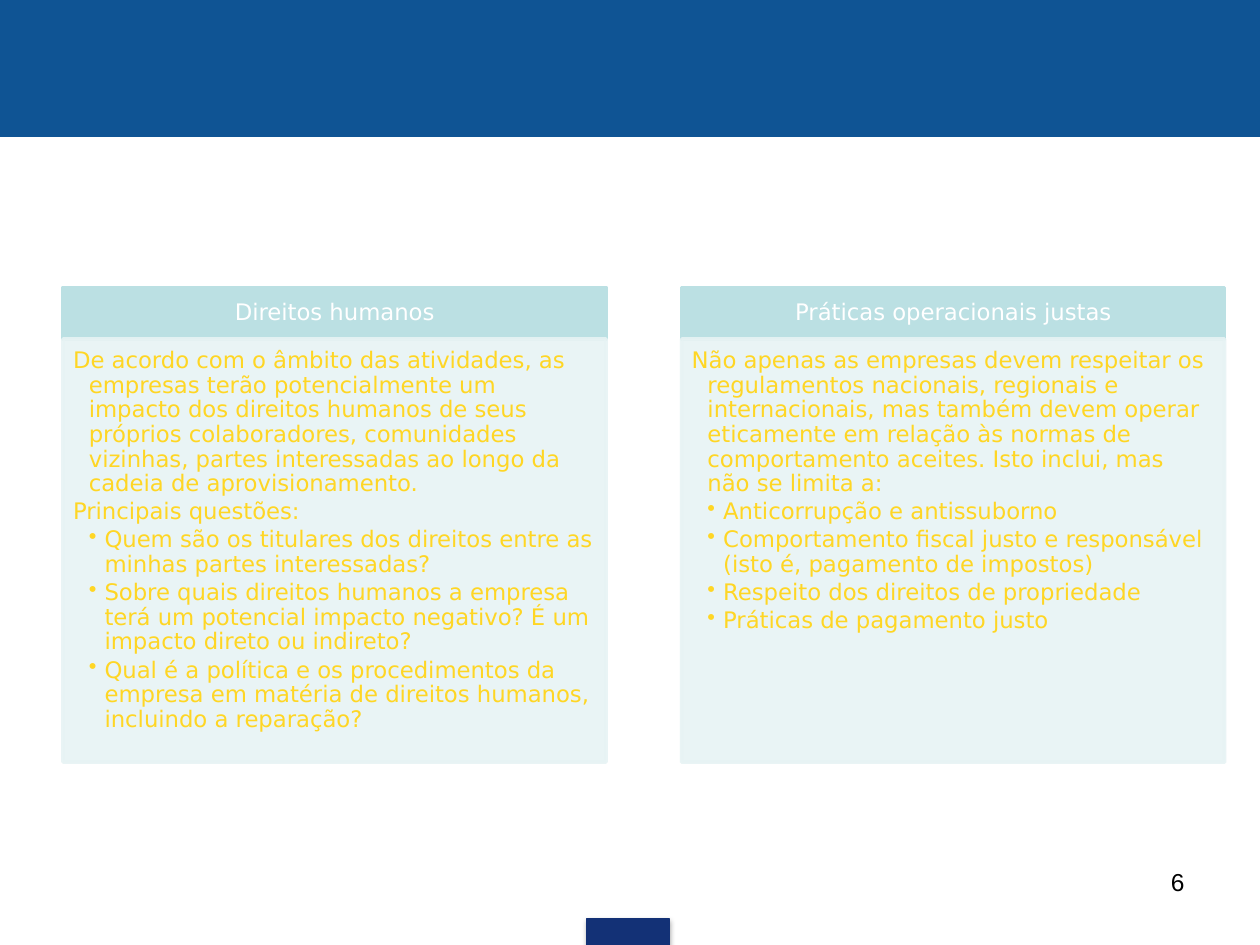
from lxml import etree
from pptx import Presentation
from pptx import util as u
from pptx.dml.color import RGBColor
from pptx.enum import shapes, text
from pptx.oxml import ns

BODY_FONT = "DejaVu Sans"
BODY_SIZE = 13
YELLOW = "FFD624"
INDENT = 0.125


def colour(value):
    return RGBColor.from_string(value)


def add_element(parent, tag, **attributes):
    return etree.SubElement(parent, ns.qn(tag), attributes)


class SlideWriter:
    def __init__(self, page):
        self.page = page

    def rectangle(self, left, top, width, height, fill, line_width=0.75, alpha=None):
        box = self.page.shapes.add_shape(
            shapes.MSO_SHAPE.RECTANGLE,
            *(u.Inches(value) for value in (left, top, width, height)))
        box.shadow.inherit = False
        box.fill.solid()
        box.fill.fore_color.rgb = colour(fill)
        box.line.color.rgb = colour(fill)
        box.line.width = u.Pt(line_width)
        if alpha:
            for tint in box._element.spPr.iter(ns.qn("a:srgbClr")):
                add_element(tint, "a:alpha", val=str(alpha * 1000))
        return box

    def shadow(self, box):
        effects = box._element.spPr.find(ns.qn("a:effectLst"))
        outer = add_element(effects, "a:outerShdw", blurRad=str(u.Pt(3.1)),
                            dist=str(u.Pt(1.8)), dir="5400000", rotWithShape="0")
        tint = add_element(outer, "a:srgbClr", val="000000")
        add_element(tint, "a:alpha", val="35000")

    def frame(self, box, anchor, insets=(0.1, 0.05, 0.1, 0.05)):
        frame = box.text_frame
        frame.word_wrap = True
        frame.vertical_anchor = anchor
        (frame.margin_left, frame.margin_top,
         frame.margin_right, frame.margin_bottom) = map(u.Inches, insets)
        return frame

    def span(self, para, words, ink, size=BODY_SIZE, font=BODY_FONT):
        span = para.add_run()
        span.text = words
        span.font.size = u.Pt(size)
        span.font.name = font
        span.font.color.rgb = colour(ink)

    def heading(self, box, words):
        frame = self.frame(box, text.MSO_ANCHOR.MIDDLE, (0.1, 0.06, 0.1, 0.06))
        para = frame.paragraphs[0]
        para.alignment = text.PP_ALIGN.CENTER
        para.line_spacing = 0.9
        self.span(para, words, "FFFFFF")

    def body(self, box, items):
        frame = self.frame(box, text.MSO_ANCHOR.TOP, (0.08, 0.08, 0.1, 0.11))
        for index, (level, words) in enumerate(items):
            para = frame.add_paragraph() if index else frame.paragraphs[0]
            para.level = level
            para.alignment = text.PP_ALIGN.LEFT
            properties = para._p.get_or_add_pPr()
            properties.set("marL", str(u.Inches(INDENT * level)))
            properties.set("indent", str(-u.Inches(INDENT)))
            if level == 2:
                add_element(properties, "a:buChar", char="•")
            else:
                add_element(properties, "a:buNone")
            para.line_spacing = 0.9
            para.space_after = u.Pt(2)
            self.span(para, words, YELLOW)

    def page_number(self, number):
        box = self.page.shapes.add_textbox(
            u.Inches(7.17), u.Inches(6.83), u.Inches(2.33), u.Inches(0.52))
        para = self.frame(box, text.MSO_ANCHOR.TOP).paragraphs[0]
        para.alignment = text.PP_ALIGN.RIGHT
        self.span(para, number, "000000", 14, "Arial")


PANELS = [
    ("Direitos humanos", [
        (1, "De acordo com o âmbito das atividades, as empresas terão potencialmente "
            "um impacto dos direitos humanos de seus próprios colaboradores, comunidades "
            "vizinhas, partes interessadas ao longo da cadeia de aprovisionamento."),
        (1, "Principais questões:"),
        (2, "Quem são os titulares dos direitos entre as minhas partes interessadas?"),
        (2, "Sobre quais direitos humanos a empresa terá um potencial impacto negativo? "
            "É um impacto direto ou indireto?"),
        (2, "Qual é a política e os procedimentos da empresa em matéria de direitos "
            "humanos, incluindo a reparação?"),
    ]),
    ("Práticas operacionais justas", [
        (1, "Não apenas as empresas devem respeitar os regulamentos nacionais, regionais "
            "e internacionais, mas também devem operar eticamente em relação às normas de "
            "comportamento aceites. Isto inclui, mas não se limita a:"),
        (2, "Anticorrupção e antissuborno"),
        (2, "Comportamento fiscal justo e responsável (isto é, pagamento de impostos)"),
        (2, "Respeito dos direitos de propriedade"),
        (2, "Práticas de pagamento justo"),
    ]),
]


def main():
    deck = Presentation()
    deck.slide_width, deck.slide_height = u.Inches(10), u.Inches(7.5)
    writer = SlideWriter(deck.slides.add_slide(deck.slide_layouts[6]))

    # Top band and footer tab
    writer.rectangle(0, 0, 10, 1.08, "0F5494")
    writer.shadow(writer.rectangle(4.66, 7.29, 0.65, 0.22, "133176"))

    # Two panels, each a heading over a body
    for column, (title, items) in enumerate(PANELS):
        left = 0.5 + 4.91 * column
        writer.heading(writer.rectangle(left, 2.28, 4.31, 0.41, "BBE0E3", 2), title)
        writer.body(writer.rectangle(left, 2.69, 4.31, 3.36, "E7F3F4", 2, 90), items)

    # Page number
    writer.page_number("6")
    deck.save("out.pptx")


if __name__ == "__main__":
    main()
